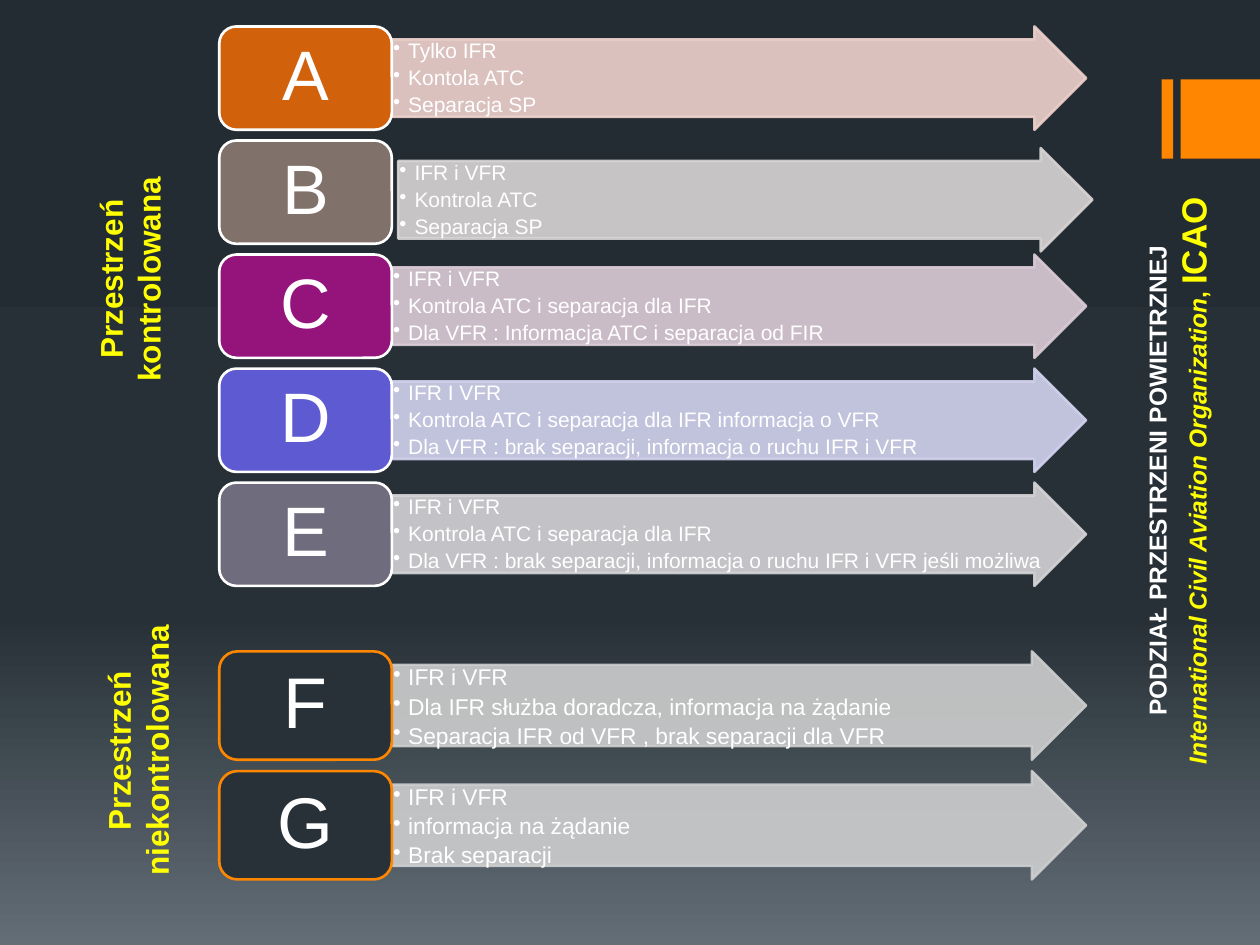
from copy import deepcopy

from lxml.etree import SubElement
from pptx import Presentation
from pptx.dml.color import RGBColor
from pptx.enum.shapes import MSO_SHAPE
from pptx.enum.text import MSO_ANCHOR, MSO_AUTO_SIZE, PP_ALIGN
from pptx.oxml.ns import qn
from pptx.util import Inches, Pt

WHITE = RGBColor(0xFF, 0xFF, 0xFF)
YELLOW = RGBColor(0xFF, 0xFF, 0x00)
ORANGE = RGBColor(0xFF, 0x86, 0x00)
SLATE = RGBColor(0x28, 0x31, 0x38)
RUST = RGBColor(0xD2, 0x61, 0x0C)
TAUPE = RGBColor(0x80, 0x71, 0x6A)
PURPLE = RGBColor(0x94, 0x14, 0x7C)
INDIGO = RGBColor(0x5D, 0x5A, 0xD2)
GREY = RGBColor(0x6F, 0x6C, 0x7D)
PALE_RUST = RGBColor(0xEE, 0xD2, 0xCC)
PALE_TAUPE = RGBColor(0xD8, 0xD5, 0xD4)
PALE_PURPLE = RGBColor(0xDC, 0xCC, 0xD7)
PALE_INDIGO = RGBColor(0xD2, 0xD2, 0xEE)
PALE_GREY = RGBColor(0xD5, 0xD4, 0xD7)
PALE_SLATE = RGBColor(0xCD, 0xCE, 0xCE)
BACKGROUND_STOPS = [
    (0, RGBColor(0x24, 0x2C, 0x33)),
    (0.65, RGBColor(0x27, 0x30, 0x37)),
    (1, RGBColor(0x63, 0x6D, 0x76)),
]


def add_text(shape, paragraphs, size, color=WHITE, bold=False, align=PP_ALIGN.CENTER,
             anchor=MSO_ANCHOR.TOP, margins=(0.1, 0.05), line_spacing=None,
             space_after=0, bullet=False):
    """Fill a shape with paragraphs, each a list of (text, run format) pairs."""
    frame = shape.text_frame
    frame.word_wrap = True
    frame.auto_size = MSO_AUTO_SIZE.NONE
    frame.vertical_anchor = anchor
    frame.margin_left = frame.margin_right = Inches(margins[0])
    frame.margin_top = frame.margin_bottom = Inches(margins[1])
    for index, runs in enumerate(paragraphs):
        paragraph = frame.add_paragraph() if index else frame.paragraphs[0]
        paragraph.alignment = align
        paragraph.line_spacing = line_spacing
        paragraph.space_after = Pt(space_after)
        if bullet:
            paragraph.level = 1
            properties = paragraph._p.get_or_add_pPr()
            properties.set("marL", str(Inches(0.12)))
            properties.set("indent", str(-Inches(0.12)))
            SubElement(properties, qn("a:buChar"), char="•")
        for text, run_format in runs:
            run = paragraph.add_run()
            run.text = text
            run.font.name = "Arial"
            run.font.size = Pt(run_format.get("size", size))
            run.font.color.rgb = run_format.get("color", color)
            run.font.bold = bold
            run.font.italic = run_format.get("italic", False)


def add_block(kind, left, top, width, height, fill, line=None):
    """Add a flat preset shape, outlined when a line colour is given."""
    shape = slide.shapes.add_shape(
        kind, Inches(left), Inches(top), Inches(width), Inches(height))
    shape.shadow.inherit = False
    shape.fill.solid()
    shape.fill.fore_color.rgb = fill
    if line is None:
        shape.line.fill.background()
    else:
        shape.line.color.rgb = line
        shape.line.width = Pt(1.5)
    return shape


presentation = Presentation()
presentation.slide_width = Inches(10)
presentation.slide_height = Inches(7.5)
slide = presentation.slides.add_slide(presentation.slide_layouts[5])

# Background gradient, dark at the top
background = slide.background.fill
background.gradient()
background.gradient_angle = 270
stop_list = next(slide._element.iter(qn("a:gsLst")))
stop_list.append(deepcopy(stop_list[0]))
for stop, (position, color) in zip(background.gradient_stops, BACKGROUND_STOPS):
    stop.position = position
    stop.color.rgb = color

# Orange accent at the right edge
for left, width in [(9.22, 0.09), (9.37, 0.63)]:
    add_block(MSO_SHAPE.RECTANGLE, left, 0.63, width, 0.63, ORANGE)

# Vertical title
title = slide.shapes.title
title.left, title.top = Inches(5.53), Inches(3.48)
title.width, title.height = Inches(7.64), Inches(0.67)
title.rotation = 270
add_text(title, [
    [("PODZIAŁ PRZESTRZENI POWIETRZNEJ", {})],
    [("International Civil Aviation Organization", {"color": YELLOW, "italic": True}),
     (", ", {"color": YELLOW}),
     ("ICAO", {"color": YELLOW, "size": 20})],
], size=14, bold=True)

# Airspace classes: letter, box fill, arrow fill, features
controlled = [
    ("A", RUST, PALE_RUST, ["Tylko IFR", "Kontola ATC", "Separacja SP"]),
    ("B", TAUPE, PALE_TAUPE, ["IFR i VFR", "Kontrola ATC", "Separacja SP"]),
    ("C", PURPLE, PALE_PURPLE, [
        "IFR i VFR", "Kontrola ATC i separacja dla IFR",
        "Dla VFR : Informacja ATC i separacja od FIR"]),
    ("D", INDIGO, PALE_INDIGO, [
        "IFR I VFR", "Kontrola ATC i separacja dla IFR informacja o VFR",
        "Dla VFR : brak separacji, informacja o ruchu IFR i VFR"]),
    ("E", GREY, PALE_GREY, [
        "IFR i VFR", "Kontrola ATC i separacja dla IFR",
        "Dla VFR : brak separacji, informacja o ruchu IFR i VFR jeśli możliwa"]),
]
uncontrolled = [
    ("F", SLATE, PALE_SLATE, [
        "IFR i VFR", "Dla IFR służba doradcza, informacja na żądanie",
        "Separacja IFR od VFR , brak separacji dla VFR"]),
    ("G", SLATE, PALE_SLATE, ["IFR i VFR", "informacja na żądanie", "Brak separacji"]),
]
# Classes, first top, row pitch, row height, box outline, letter size, feature size
sections = [
    (controlled, 0.21, 0.905, 0.82, WHITE, 40, 12),
    (uncontrolled, 5.17, 0.95, 0.86, ORANGE, 41, 13),
]
arrow_shifts = {"B": (0.05, 0.06)}

for classes, first_top, pitch, height, outline, letter_size, feature_size in sections:
    for row, (letter, box_fill, arrow_fill, features) in enumerate(classes):
        top = first_top + row * pitch
        shift_x, shift_y = arrow_shifts.get(letter, (0, 0))
        arrow = add_block(MSO_SHAPE.RIGHT_ARROW, 3.11 + shift_x, top + shift_y,
                          5.51, height, arrow_fill, arrow_fill)
        arrow.adjustments[0] = 0.75
        arrow.adjustments[1] = 0.5
        for color_element in arrow._element.spPr.iter(qn("a:srgbClr")):
            SubElement(color_element, qn("a:alpha"), val="90000")
        add_text(arrow, [[(feature, {})] for feature in features], size=feature_size,
                 align=PP_ALIGN.LEFT, margins=(0.01, 0.01), line_spacing=0.9,
                 space_after=0.2 * feature_size, bullet=True)

        box = add_block(MSO_SHAPE.ROUNDED_RECTANGLE, 1.74, top, 1.37, height,
                        box_fill, outline)
        add_text(box, [[(letter, {})]], size=letter_size, anchor=MSO_ANCHOR.MIDDLE,
                 margins=(0.17, 0.08), line_spacing=0.9)

# Vertical labels of the two sections
for left, top, width, words in [
    (-0.82, 1.86, 3.7, ["Przestrzeń", "kontrolowana"]),
    (-0.32, 5.6, 2.83, ["Przestrzeń", "niekontrolowana"]),
]:
    label = slide.shapes.add_textbox(
        Inches(left), Inches(top), Inches(width), Inches(0.71))
    label.rotation = 270
    add_text(label, [[(word, {})] for word in words], size=18, color=YELLOW, bold=True)

presentation.save("out.pptx")
